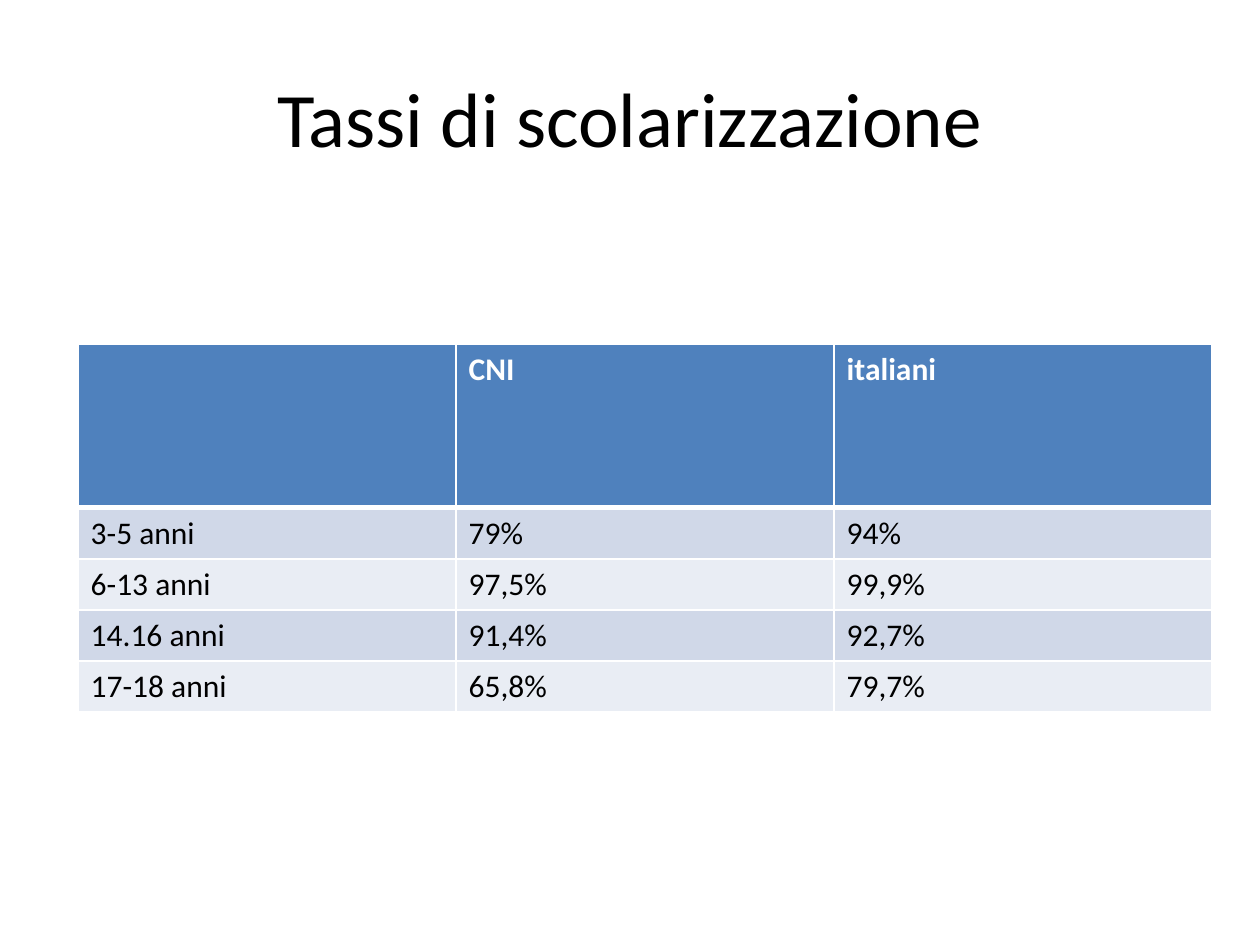
from lxml.etree import SubElement
from pptx import Presentation
from pptx.dml.color import RGBColor
from pptx.enum.text import MSO_ANCHOR, PP_ALIGN
from pptx.oxml.ns import qn
from pptx.util import Inches, Pt

FONT = "Calibri"
COLORS = {
    "text": "000000",
    "header": "4F81BD",
    "header_text": "FFFFFF",
    "border": "FFFFFF",
    "odd_band": "D0D8E8",
    "even_band": "E9EDF4",
}
RATES = [
    ["", "CNI", "italiani"],
    ["3-5 anni", "79%", "94%"],
    ["6-13 anni", "97,5%", "99,9%"],
    ["14.16 anni", "91,4%", "92,7%"],
    ["17-18 anni", "65,8%", "79,7%"],
]
COLUMN_WIDTH = 3
HEADER_HEIGHT = 1.3
ROW_HEIGHT = 0.405


def format_text(para, size, color, bold=False):
    for span in para.runs:
        span.font.name = FONT
        span.font.size = Pt(size)
        span.font.bold = bold
        span.font.color.rgb = RGBColor.from_string(COLORS[color])


def add_title(page, text):
    box = page.shapes.title
    box.left, box.top = Inches(0.5), Inches(0.3)
    box.width, box.height = Inches(9), Inches(1.25)
    frame = box.text_frame
    frame.text = text
    frame.word_wrap = True
    frame.vertical_anchor = MSO_ANCHOR.MIDDLE
    para = frame.paragraphs[0]
    para.alignment = PP_ALIGN.CENTER
    format_text(para, 44, "text")


def set_borders(cell, top, bottom):
    properties = cell._tc.get_or_add_tcPr()
    for side, width in (("L", 1), ("R", 1), ("T", top), ("B", bottom)):
        line = SubElement(properties, qn(f"a:ln{side}"), w=str(Pt(width)))
        fill = SubElement(line, qn("a:solidFill"))
        SubElement(fill, qn("a:srgbClr"), val=COLORS["border"])


def fill_cell(cell, text, row):
    is_header = row == 0
    # Borders come before the fill in the cell properties
    set_borders(cell, top=3 if row == 1 else 1, bottom=3 if is_header else 1)
    band = "header" if is_header else "odd_band" if row % 2 else "even_band"
    cell.fill.solid()
    cell.fill.fore_color.rgb = RGBColor.from_string(COLORS[band])
    para = cell.text_frame.paragraphs[0]
    if text:
        para.text = text
    format_text(para, 18, "header_text" if is_header else "text", is_header)


def add_rates_table(page, rows):
    column_count = len(rows[0])
    height = HEADER_HEIGHT + ROW_HEIGHT * (len(rows) - 1)
    table = page.shapes.add_table(
        len(rows), column_count, Inches(0.62), Inches(2.73),
        Inches(COLUMN_WIDTH * column_count), Inches(height),
    ).table
    for column in table.columns:
        column.width = Inches(COLUMN_WIDTH)
    for row, texts in enumerate(rows):
        table.rows[row].height = Inches(ROW_HEIGHT if row else HEADER_HEIGHT)
        for column, text in enumerate(texts):
            fill_cell(table.cell(row, column), text, row)


def main():
    deck = Presentation()
    deck.slide_width, deck.slide_height = Inches(10), Inches(7.5)
    # Title-only layout
    page = deck.slides.add_slide(deck.slide_layouts[5])
    add_title(page, "Tassi di scolarizzazione")
    add_rates_table(page, RATES)
    deck.save("out.pptx")


if __name__ == "__main__":
    main()
